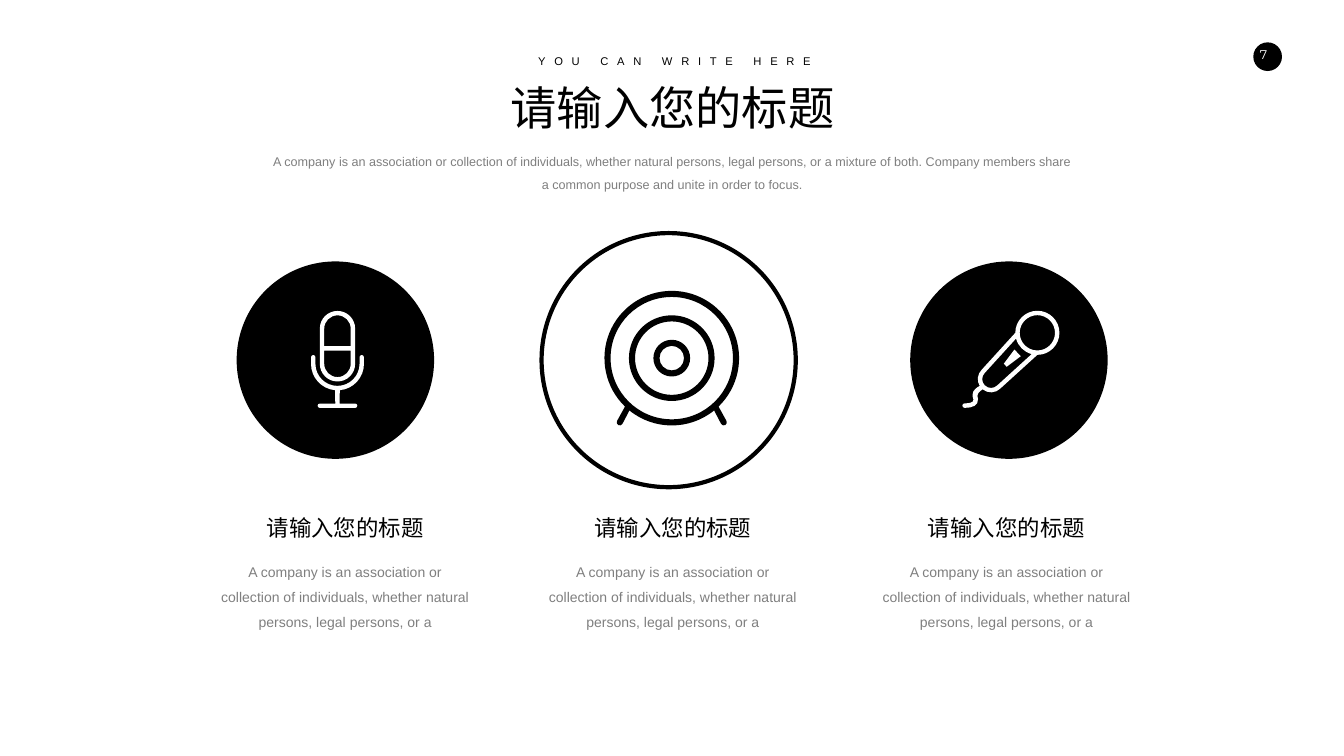
from dataclasses import dataclass
from math import ceil, cos, radians, sin, tan

from pptx import Presentation
from pptx.dml.color import RGBColor
from pptx.enum.shapes import MSO_SHAPE as Preset
from pptx.enum.text import MSO_ANCHOR as Anchor, MSO_AUTO_SIZE as AutoSize, PP_ALIGN as Align
from pptx.oxml.ns import qn
from pptx.util import Pt

Point = tuple[float, float]
Contour = list[tuple[Point, ...]]


@dataclass(frozen=True)
class Theme:
    font: str = "Arial"
    number_font: str = "Montserrat"
    ink: RGBColor = RGBColor(0, 0, 0)
    paper: RGBColor = RGBColor(255, 255, 255)
    muted: RGBColor = RGBColor(127, 127, 127)
    title: float = 66
    heading: float = 32
    column: float = 20
    intro: float = 18
    tagline: float = 16
    outline: float = 6


@dataclass(frozen=True)
class TextBlock:
    text: str
    center: float
    top: float
    width: float
    height: float
    size: float
    color: RGBColor
    font: str = Theme.font
    line_spacing: float = 1.0
    tracking: float = 0


@dataclass(frozen=True)
class Icon:
    contours: list[Contour]
    left: float
    top: float
    unit: float


@dataclass(frozen=True)
class Column:
    circle_center: float
    text_center: float
    diameter: float
    filled: bool
    icon: Icon


THEME = Theme()
HEADING = "请输入您的标题"
SUMMARY = (
    "A company is an association or collection of individuals, whether natural persons, "
    "legal persons, or a"
)
INTRO = (
    f"{SUMMARY} mixture of both. Company members share a common purpose and "
    "unite in order to focus."
)


def lines(*points: Point) -> Contour:
    return [(point,) for point in points]


def arc(x: float, y: float, radius: float, start: float = 0, end: float = 360) -> Contour:
    count = ceil(abs(end - start) / 90)
    step = radians(end - start) / count
    handle = 4 / 3 * tan(step / 4)

    def at(angle: float, pull: float = 0) -> Point:
        return (x + radius * (cos(angle) - pull * sin(angle)),
                y + radius * (sin(angle) + pull * cos(angle)))

    angles = [radians(start) + step * index for index in range(count + 1)]
    curves = [(at(a, handle), at(b, -handle), at(b)) for a, b in zip(angles, angles[1:])]
    return lines(at(angles[0])) + curves


def studio_microphone() -> list[Contour]:
    return [
        arc(6, 4, 4, 180, 360) + arc(6, 12, 4, 0, 180),
        arc(6, 4, 3, 180, 360) + lines((9, 8), (3, 8)),
        lines((3, 9), (9, 9)) + arc(6, 12, 3, 0, 180),
        arc(0.5, 10.5, 0.5, 180, 360) + arc(6, 12, 5, 180, 0)
        + arc(11.5, 10.5, 0.5, 180, 360) + arc(6, 12, 6, 0, 85)
        + lines((6.5, 21)) + arc(10, 21.5, 0.5, -90, 90)
        + arc(2, 21.5, 0.5, 90, 270) + lines((5.5, 21)) + arc(6, 12, 6, 95, 180),
    ]


def webcam() -> list[Contour]:
    body = (
        arc(11, 11, 11, 134, 406) + arc(19.5, 21.5, 0.5, -30, 150)
        + arc(11, 11, 11, 51, 129) + arc(2.5, 21.5, 0.5, 30, 210)
    )
    return [body] + [arc(11, 11, radius) for radius in (10, 7, 6, 3, 2)]


def hand_microphone() -> list[Contour]:
    cord = (
        [((3.5, 18.6), (3.2, 19), (3.55, 20)), ((3.6, 21.5), (2.4, 22), (0.5, 22))]
        + arc(0.5, 21.5, 0.5, 90, 270)
        + [((1.5, 21), (2.7, 20.8), (2.5, 20.1)), ((2, 18.5), (2.5, 17.8), (4, 17))]
    )
    return [
        arc(17, 5, 5, -180, 90) + arc(6.5, 15.5, 3, 45, 130)
        + cord + arc(6.5, 15.5, 3, 149, 225),
        arc(17, 5, 4),
        arc(17, 5, 5, 165, 105) + arc(6.5, 15.5, 2, 45, 225),
        lines((9.4, 12), (10.05, 12.7), (13.25, 10.3), (11.8, 8.8)),
    ]


def set_attributes(target: object, values: dict[str, object]) -> None:
    for name, value in values.items():
        setattr(target, name, value)


def write_text(shape, block: TextBlock) -> None:
    set_attributes(shape, {
        "left": Pt(block.center - block.width / 2), "top": Pt(block.top),
        "width": Pt(block.width), "height": Pt(block.height),
    })
    set_attributes(shape.text_frame, {
        "word_wrap": True, "auto_size": AutoSize.NONE, "vertical_anchor": Anchor.TOP,
    })
    paragraph = shape.text_frame.paragraphs[0]
    set_attributes(paragraph, {"alignment": Align.CENTER, "line_spacing": block.line_spacing})
    run = paragraph.add_run()
    run.text = block.text
    set_attributes(run.font, {"name": block.font, "size": Pt(block.size)})
    run.font.color.rgb = block.color
    if block.tracking:
        run._r.get_or_add_rPr().set("spc", str(round(block.tracking * 100)))


def add_text(slide, block: TextBlock) -> None:
    write_text(slide.shapes.add_textbox(0, 0, 0, 0), block)


def paint(shape, color: RGBColor) -> None:
    shape.shadow.inherit = False
    shape.fill.solid()
    shape.fill.fore_color.rgb = color
    shape.line.fill.background()


def add_circle(slide, x: float, y: float, diameter: float, filled: bool) -> None:
    corner = Pt(x - diameter / 2), Pt(y - diameter / 2)
    circle = slide.shapes.add_shape(Preset.OVAL, *corner, Pt(diameter), Pt(diameter))
    paint(circle, THEME.ink)
    if not filled:
        circle.fill.background()
        circle.line.color.rgb = THEME.ink
        circle.line.width = Pt(THEME.outline)


def add_icon(slide, icon: Icon, color: RGBColor) -> None:
    def place(point: Point) -> Point:
        return Pt(icon.left + point[0] * icon.unit), Pt(icon.top + point[1] * icon.unit)

    builder = slide.shapes.build_freeform(*place(icon.contours[0][0][0]))
    for index, contour in enumerate(icon.contours):
        if index:
            builder.move_to(*place(contour[0][0]))
        points = [place(point) for segment in contour[1:] for point in segment]
        builder.add_line_segments(points, close=True)
    shape = builder.convert_to_shape()
    paint(shape, color)

    steps = iter(list(shape._element.iter(qn("a:lnTo"))))
    for segment in (part for contour in icon.contours for part in contour[1:]):
        first, *others = [next(steps) for _ in segment]
        if others:
            first.tag = qn("a:cubicBezTo")
        for other in others:
            first.append(other[0])
            other.getparent().remove(other)


def add_column(slide, column: Column) -> None:
    add_circle(slide, column.circle_center, 514.5, column.diameter, column.filled)
    add_icon(slide, column.icon, THEME.paper if column.filled else THEME.ink)
    center = column.text_center
    add_text(slide, TextBlock(HEADING, center, 731.5, 394, 46, THEME.heading, THEME.ink))
    add_text(slide, TextBlock(SUMMARY, center, 789, 378, 117, THEME.column, THEME.muted,
                              line_spacing=1.5))


def main() -> None:
    presentation = Presentation()
    set_attributes(presentation, {"slide_width": Pt(1919.5), "slide_height": Pt(1080)})
    slide = presentation.slides.add_slide(presentation.slide_layouts[5])
    add_circle(slide, 1810.5, 81, 41, True)
    add_text(slide, TextBlock("7", 1804.5, 64, 40, 36, 18, THEME.paper, THEME.number_font))
    write_text(slide.shapes.title,
               TextBlock(HEADING, 960.5, 109.5, 1084, 87, THEME.title, THEME.ink))
    add_text(slide, TextBlock("YOU CAN WRITE HERE", 963.5, 73.5, 493, 27, THEME.tagline,
                              THEME.ink, tracking=12.5))
    add_text(slide, TextBlock(INTRO, 960, 206, 1154, 73, THEME.intro, THEME.muted,
                              line_spacing=1.5))
    for column in (
        Column(479, 493, 282, True, Icon(studio_microphone(), 444.2, 444.2, 6.3)),
        Column(955, 961, 363, False, Icon(webcam(), 863.3, 415.5, 8.74)),
        Column(1441, 1437.5, 282, True, Icon(hand_microphone(), 1374.5, 444, 6.3)),
    ):
        add_column(slide, column)
    presentation.save("out.pptx")


if __name__ == "__main__":
    main()
